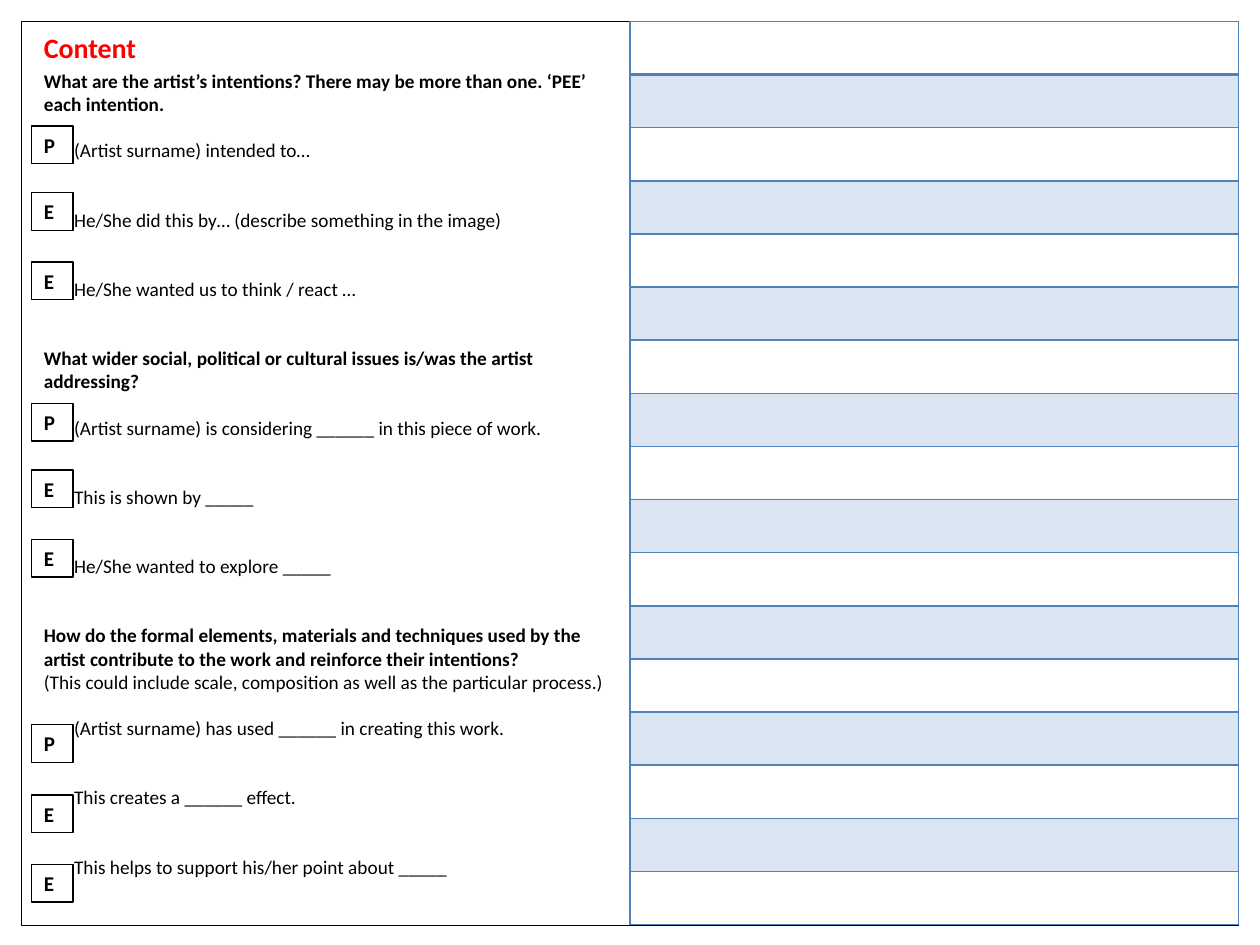
from lxml import etree
from pptx import Presentation
from pptx.dml.color import RGBColor
from pptx.enum.shapes import MSO_SHAPE
from pptx.enum.text import MSO_ANCHOR, PP_ALIGN
from pptx.oxml.ns import qn
from pptx.util import Inches, Pt

RECTANGLE = MSO_SHAPE.RECTANGLE
LEFT = PP_ALIGN.LEFT
TOP = MSO_ANCHOR.TOP

BLACK, RED, BLUE = "000000", "FF0000", "4F81BD"
TITLE = {"name": "Calibri", "size": Pt(16), "bold": True}
QUESTION = {"name": "Calibri", "size": Pt(11), "bold": True}
STARTER = {"name": "Calibri", "size": Pt(11), "bold": False}
LABEL = {"name": "Calibri", "size": Pt(12), "bold": True}

MARGIN, PANEL_WIDTH, PANEL_HEIGHT = 0.17, 4.83, 7.17
ANSWER_LEFT = MARGIN + PANEL_WIDTH
ANSWER_ROWS = 17
LINE_PITCH = 13.2
STARTER_INDENT = 0.24

# (text, format, indent in inches, empty lines before)
PROMPTS = [
    ("What are the artist’s intentions? There may be more than one. ‘PEE’ each intention.",
     QUESTION, 0, 0),
    ("(Artist surname) intended to…", STARTER, STARTER_INDENT, 1),
    ("He/She did this by… (describe something in the image)", STARTER, STARTER_INDENT, 2),
    ("He/She wanted us to think / react …", STARTER, STARTER_INDENT, 2),
    ("What wider social, political or cultural issues is/was the artist", QUESTION, 0, 2),
    ("addressing?", QUESTION, 0, 0),
    ("(Artist surname) is considering ______ in this piece of work.",
     STARTER, STARTER_INDENT, 1),
    ("This is shown by _____", STARTER, STARTER_INDENT, 2),
    ("He/She wanted to explore _____", STARTER, STARTER_INDENT, 2),
    ("How do the formal elements, materials and techniques used by the artist "
     "contribute to the work and reinforce their intentions?", QUESTION, 0, 2),
    ("(This could include scale, composition as well as the particular process.)",
     STARTER, 0, 0),
    ("(Artist surname) has used ______ in creating this work.", STARTER, STARTER_INDENT, 1),
    ("This creates a ______ effect.", STARTER, STARTER_INDENT, 2),
    ("This helps to support his/her point about _____", STARTER, STARTER_INDENT, 2),
]

# Tops of the Point, Evidence, Explain labels under each question
LABEL_TOPS = [(1, 1.53, 2.08), (3.2, 3.73, 4.28), (5.75, 6.31, 6.86)]


def color(hex_code):
    return RGBColor.from_string(hex_code)


def write(paragraph, text, font_values, hex_code=BLACK):
    run = paragraph.add_run()
    run.text = text
    for name, value in font_values.items():
        setattr(run.font, name, value)
    run.font.color.rgb = color(hex_code)


def add_text_frame(slide, left, top, width, height):
    frame = slide.shapes.add_textbox(
        Inches(left), Inches(top), Inches(width), Inches(height)).text_frame
    frame.word_wrap = True
    return frame


def add_outline(slide, left, top, width, height, weight):
    outline = slide.shapes.add_shape(
        RECTANGLE, Inches(left), Inches(top), Inches(width), Inches(height))
    outline.shadow.inherit = False
    outline.fill.background()
    outline.line.color.rgb = color(BLACK)
    outline.line.width = Pt(weight)
    return outline


def add_label(slide, letter, top):
    frame = add_outline(slide, 0.25, top, 0.33, 0.3, 0.75).text_frame
    frame.word_wrap = False
    frame.vertical_anchor = TOP
    frame.paragraphs[0].alignment = LEFT
    write(frame.paragraphs[0], letter, LABEL)


def add_prompts(slide):
    frame = add_text_frame(slide, 0.25, 0.5, 4.83, 7.51)
    for index, (text, font_values, indent, empty_lines) in enumerate(PROMPTS):
        paragraph = frame.add_paragraph() if index else frame.paragraphs[0]
        paragraph.space_before = Pt(LINE_PITCH * empty_lines)
        if indent:
            properties = paragraph._p.get_or_add_pPr()
            properties.set("marL", str(Inches(indent)))
            properties.set("indent", "0")
        write(paragraph, text, font_values)


def set_borders(cell, weights):
    properties = cell._tc.get_or_add_tcPr()
    for position, (side, weight) in enumerate(weights.items()):
        border = etree.Element(qn(f"a:ln{side}"), w=str(Pt(weight)))
        fill = etree.SubElement(border, qn("a:solidFill"))
        etree.SubElement(fill, qn("a:srgbClr"), val=BLUE)
        properties.insert(position, border)


def tint(cell, percent):
    cell.fill.solid()
    cell.fill.fore_color.rgb = color(BLUE)
    shade = cell._tc.tcPr.find(qn("a:solidFill")).find(qn("a:srgbClr"))
    etree.SubElement(shade, qn("a:alpha"), val=str(percent * 1000))


def add_answer_lines(slide):
    table = slide.shapes.add_table(
        ANSWER_ROWS, 1, Inches(ANSWER_LEFT), Inches(MARGIN),
        Inches(PANEL_WIDTH), Inches(PANEL_HEIGHT)).table
    table.first_row = False
    table.horz_banding = False
    for index, row in enumerate(table.rows):
        row.height = Inches(PANEL_HEIGHT / ANSWER_ROWS)
        cell = row.cells[0]
        if index % 2:
            tint(cell, 20)
        else:
            cell.fill.background()
        # The rule under the first row is heavier
        set_borders(cell, {"L": 1, "R": 1, "T": 2 if index == 1 else 1,
                           "B": 2 if index == 0 else 1})


def main():
    presentation = Presentation()
    presentation.slide_width = Inches(10)
    presentation.slide_height = Inches(7.5)
    slide = presentation.slides.add_slide(presentation.slide_layouts[6])

    # Heading
    heading = add_text_frame(slide, 0.25, 0.17, 4.7, 0.39).paragraphs[0]
    heading.line_spacing = 1.1
    write(heading, "Content", TITLE, RED)

    # Two panels: prompts and answers
    for left in (MARGIN, ANSWER_LEFT):
        add_outline(slide, left, MARGIN, PANEL_WIDTH, PANEL_HEIGHT, 0.25)

    # Questions with sentence starters
    add_prompts(slide)
    for tops in LABEL_TOPS:
        for letter, top in zip("PEE", tops):
            add_label(slide, letter, top)

    # Ruled answer space
    add_answer_lines(slide)

    presentation.save("out.pptx")


if __name__ == "__main__":
    main()
